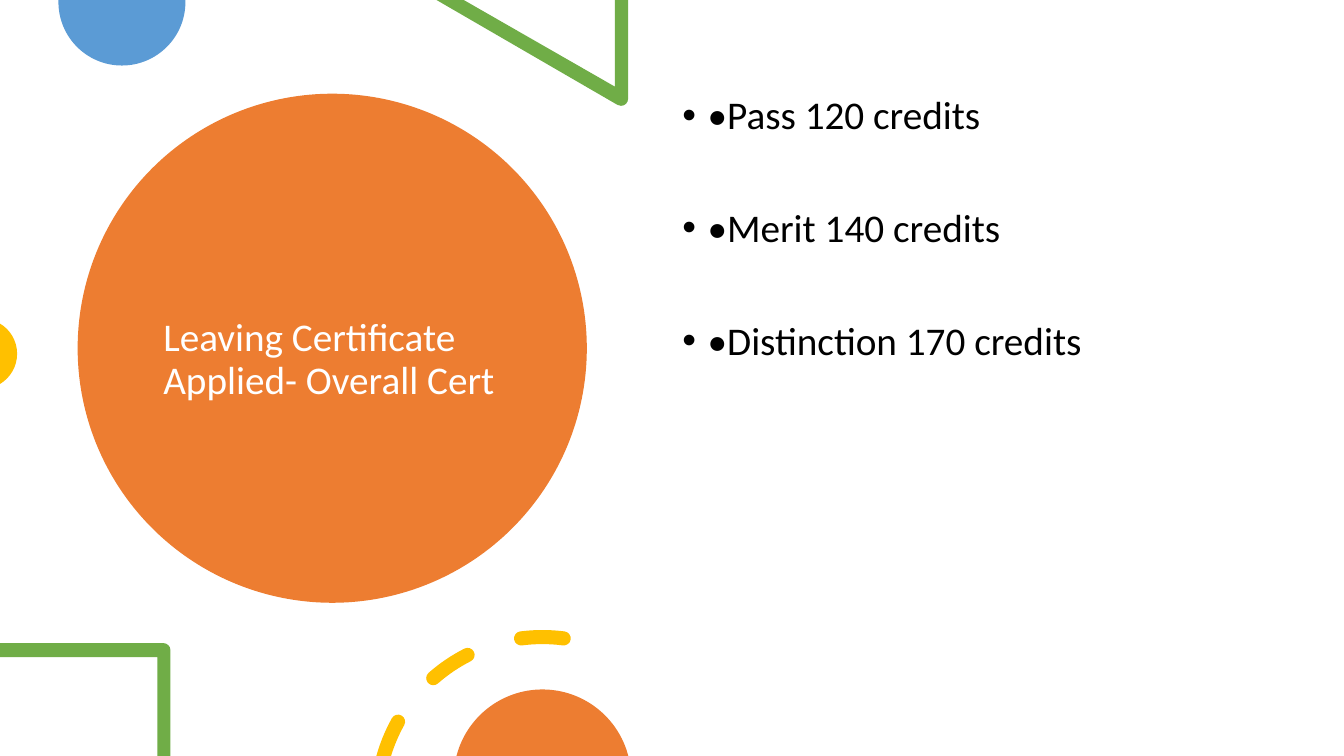
from dataclasses import dataclass
from math import cos, radians, sin, tan

from lxml import etree
from pptx import Presentation, util as u
from pptx.dml.color import RGBColor
from pptx.enum import shapes, text
from pptx.oxml.ns import qn

# Content
TITLE = "Leaving Certificate  Applied- Overall Cert"
CREDITS = ["•Pass 120 credits ", "•Merit 140 credits ", "•Distinction 170 credits"]


@dataclass(frozen=True)
class Theme:
    font: str = "Calibri"
    bullet_font: str = "Arial"
    size: int = 28
    white: str = "FFFFFF"
    black: str = "000000"
    orange: str = "ED7D31"
    blue: str = "5B9BD5"
    green: str = "70AD47"
    yellow: str = "FFC000"


THEME = Theme()
WIDTH, HEIGHT = 13.33, 7.5
HALF = 0.07  # half the thickness of every outline stroke
RING = (5.38, 7.96, 1.64)  # centre x, centre y, radius of the dashed ring


def polar(cx, cy, r, angle):
    """Point at an angle in degrees, clockwise from straight up."""
    return cx + r * sin(radians(angle)), cy - r * cos(radians(angle))


def arc(cx, cy, r, start, end, parts=2):
    """Start point, then one (control, control, end) step for each part."""
    turn = (end - start) / parts
    k = 4 / 3 * tan(radians(turn) / 4)
    steps = [(polar(cx, cy, r, start),)]
    for i in range(parts):
        a, b = start + turn * i, start + turn * (i + 1)
        (x0, y0), (x1, y1) = polar(cx, cy, r, a), polar(cx, cy, r, b)
        (ax, ay), (bx, by) = polar(0, 0, r * k, a + 90), polar(0, 0, r * k, b + 90)
        steps.append(((x0 + ax, y0 + ay), (x1 - bx, y1 - by), (x1, y1)))
    return steps


def line(*points):
    return [(point,) for point in points]


def cap(angle, turn):
    """Round end of a dash, without its start point."""
    return arc(*polar(*RING, angle), HALF, turn, turn + 180)[1:]


def dash(start, end, inner_start=None):
    """Ring dash; the start is rounded unless the slide edge cuts it off."""
    cx, cy, r = RING
    inner_end = start if inner_start is None else inner_start
    steps = (arc(cx, cy, r + HALF, start, end) + cap(end, end)
             + arc(cx, cy, r - HALF, end, inner_end, 1)[1:])
    return steps + (cap(start, start + 180) if inner_start is None else [])


# Decorations: colour and closed contours, trimmed at the slide edge
DECORATIONS = [
    (THEME.blue, [line((1.84, 0), (0.58, 0)) + arc(1.21, 0.02, 0.63, 270, 90)]),
    (THEME.green, [line((6.23, 0), (6.1, 0), (6.1, 0.86), (4.6, 0), (4.33, 0))
                   + arc(6.16, 0.98, HALF, 210, 180, 1)
                   + arc(6.16, 0.98, HALF, 180, 90, 1)[1:]]),
    (THEME.yellow, [line((0, 3.21), (0, 3.82)) + arc(-0.18, 3.51, 0.35, 149, 31)]),
    (THEME.green, [line((0, 6.52), (0, 6.38)) + arc(1.62, 6.45, HALF, 0, 90, 1)
                   + line((1.69, HEIGHT), (1.56, HEIGHT), (1.56, 6.52))]),
    (THEME.yellow, [dash(-74.4, -60.8, -73), dash(-41.3, -26.9), dash(-7.4, 7.4)]),
    (THEME.orange, [arc(5.38, 7.72, 0.88, -75.5, 75.5)]),
]


def paint(sp, color):
    sp.shadow.inherit = False
    sp.fill.solid()
    sp.fill.fore_color.rgb = RGBColor.from_string(color)
    sp.line.fill.background()


def add_outline(s, color, contours):
    pens = [[[(u.Inches(x), u.Inches(y)) for x, y in step] for step in steps]
            for steps in contours]
    builder = s.shapes.build_freeform(*pens[0][0][0])
    for i, steps in enumerate(pens):
        if i:
            builder.move_to(*steps[0][0])
        builder.add_line_segments([step[-1] for step in steps[1:]], close=True)
    sp = builder.convert_to_shape()
    paint(sp, color)

    # Bend the straight segments that carry control points
    bends = [step for steps in pens for step in steps[1:]]
    for segment, step in zip(list(sp.element.iter(qn("a:lnTo"))), bends):
        if len(step) == 3:
            curve = etree.Element(qn("a:cubicBezTo"))
            for x, y in step:
                etree.SubElement(curve, qn("a:pt"),
                                 x=str(x - sp.left), y=str(y - sp.top))
            segment.getparent().replace(segment, curve)


def style(p, color):
    p.alignment = text.PP_ALIGN.LEFT
    p.line_spacing = 0.9
    p.font.name = THEME.font
    p.font.size = u.Pt(THEME.size)
    p.font.color.rgb = RGBColor.from_string(color)


def add_bullet(p):
    pPr = p._p.get_or_add_pPr()
    pPr.set("marL", str(u.Inches(0.25)))
    pPr.set("indent", str(u.Inches(-0.25)))
    defaults = pPr.find(qn("a:defRPr"))
    defaults.addprevious(etree.Element(qn("a:buFont"), typeface=THEME.bullet_font))
    defaults.addprevious(etree.Element(qn("a:buChar"), char="•"))


def add_title(s):
    title = s.shapes.title
    title.left, title.top, title.width, title.height = map(
        u.Inches, (1.52, 1.35, 3.54, 4.45))
    tf = title.text_frame
    tf.text = TITLE
    tf.word_wrap = True
    tf.auto_size = text.MSO_AUTO_SIZE.NONE
    tf.vertical_anchor = text.MSO_ANCHOR.MIDDLE
    style(tf.paragraphs[0], THEME.white)

    # The disc sits behind the title
    disc = s.shapes.add_shape(shapes.MSO_SHAPE.OVAL,
                              *map(u.Inches, (0.77, 0.93, 5.05, 5.05)))
    paint(disc, THEME.orange)
    title.element.addprevious(disc.element)


def add_credits(s):
    box = s.shapes.add_textbox(*map(u.Inches, (6.67, 0.9, 5.75, 5.35)))
    tf = box.text_frame
    tf.word_wrap = True
    for i, credit in enumerate(CREDITS):
        p = tf.add_paragraph() if i else tf.paragraphs[0]
        p.text = credit
        style(p, THEME.black)
        p.space_before = u.Pt(50.3 if i else 10)
        add_bullet(p)


def main():
    prs = Presentation()
    prs.slide_width, prs.slide_height = u.Inches(WIDTH), u.Inches(HEIGHT)
    s = prs.slides.add_slide(prs.slide_layouts[5])
    add_title(s)
    for color, contours in DECORATIONS[:3]:
        add_outline(s, color, contours)
    add_credits(s)
    for color, contours in DECORATIONS[3:]:
        add_outline(s, color, contours)
    prs.save("out.pptx")


if __name__ == "__main__":
    main()
